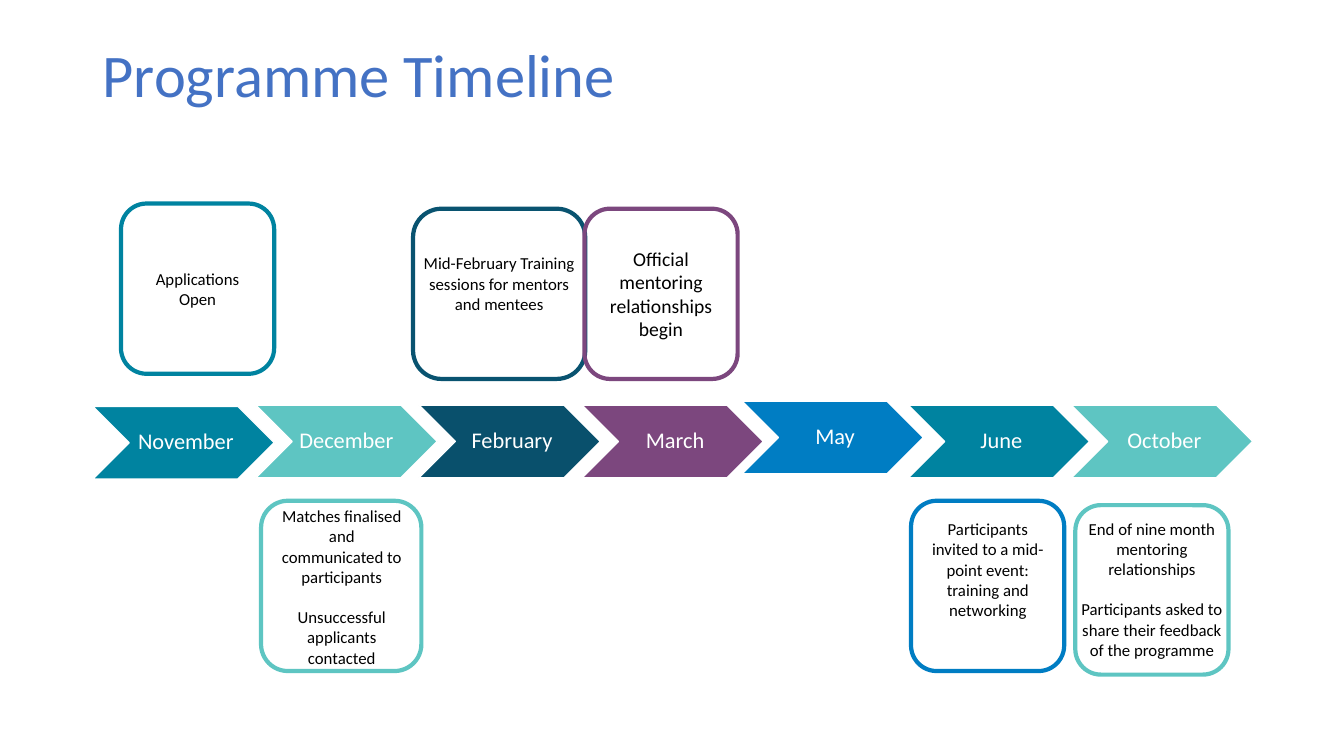
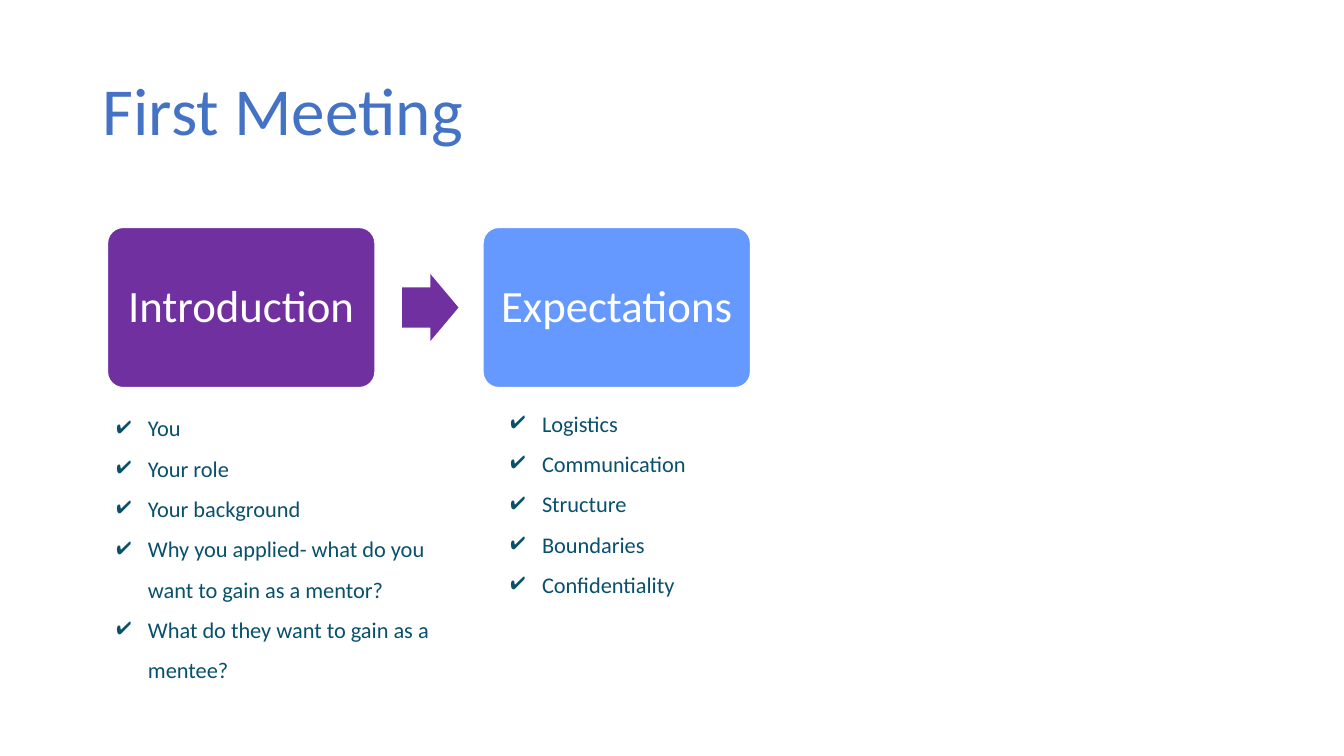
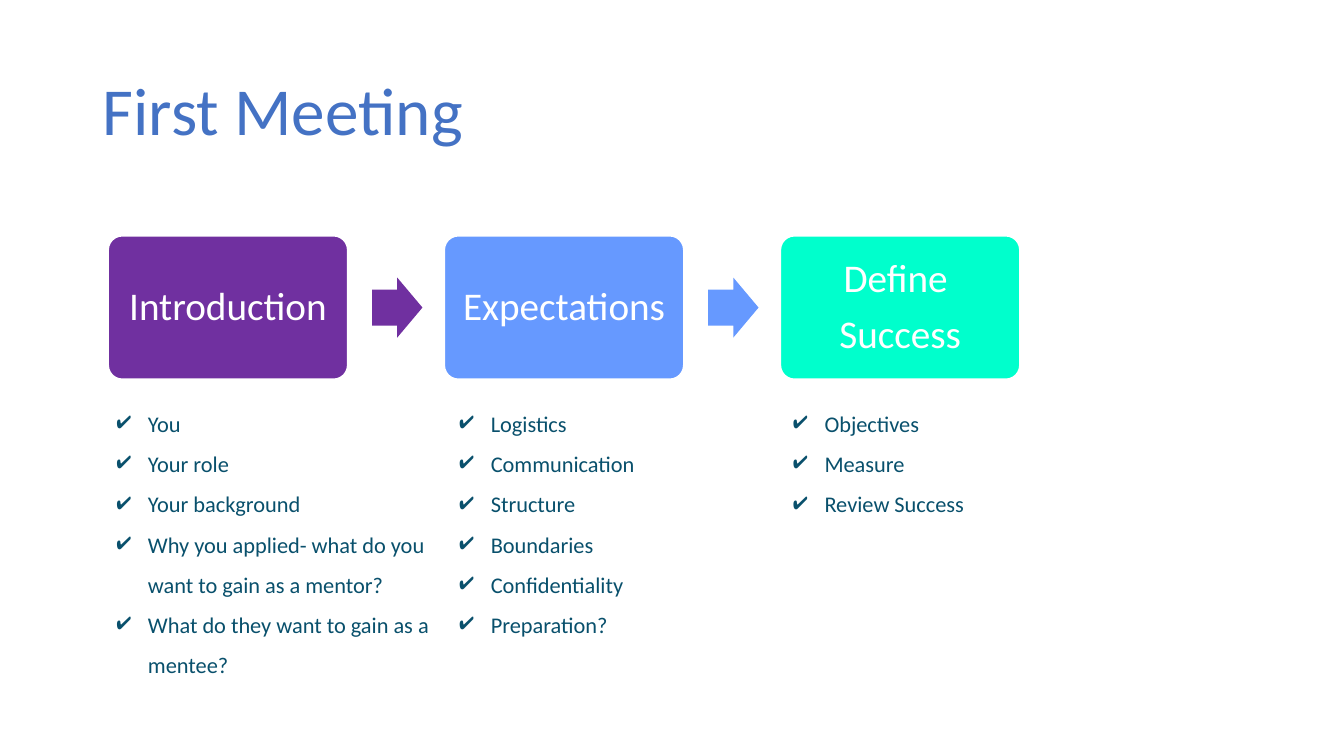
from lxml import etree
from pptx import Presentation
from pptx.dml.color import RGBColor
from pptx.enum.shapes import MSO_SHAPE
from pptx.enum.text import MSO_ANCHOR, PP_ALIGN
from pptx.oxml.ns import qn
from pptx.util import Cm, Pt

CHEVRON = MSO_SHAPE.CHEVRON
ROUNDED = MSO_SHAPE.ROUNDED_RECTANGLE
ARROW = MSO_SHAPE.RIGHT_ARROW
TOP, MIDDLE = MSO_ANCHOR.TOP, MSO_ANCHOR.MIDDLE
LEFT, CENTER = PP_ALIGN.LEFT, PP_ALIGN.CENTER

# Shared colours and font
WHITE = RGBColor(0xFF, 0xFF, 0xFF)
BLACK = RGBColor(0x00, 0x00, 0x00)
TITLE_BLUE = RGBColor(0x44, 0x72, 0xC4)
TEAL = RGBColor(0x00, 0x83, 0xA0)
AQUA = RGBColor(0x5E, 0xC5, 0xC2)
NAVY = RGBColor(0x09, 0x50, 0x6C)
NAVY_EDGE = RGBColor(0x09, 0x53, 0x70)
PLUM = RGBColor(0x7C, 0x47, 0x7E)
BLUE = RGBColor(0x00, 0x7D, 0xC3)
PURPLE = RGBColor(0x70, 0x30, 0xA0)
PERIWINKLE = RGBColor(0x66, 0x99, 0xFF)
MINT = RGBColor(0x00, 0xFF, 0xCC)
FONT = "Calibri"

# Timeline: month, colour, shift from the regular grid (cm)
MONTHS = [
    ("November", TEAL, 0, 0.03),
    ("December ", AQUA, 0, 0),
    ("February", NAVY, 0, 0),
    ("March", PLUM, 0, 0),
    ("May", BLUE, -0.08, -0.1),
    ("June", TEAL, 0, 0),
    ("October", AQUA, 0, 0),
]
# Cards: box (cm), outline, text inside, text size
CARDS = [
    ((3.05, 5.13, 3.86, 4.29), TEAL, ["Applications Open"], 12),
    ((6.58, 12.62, 4.04, 4.29), AQUA, [], 12),
    ((10.41, 5.26, 4.34, 4.29), NAVY_EDGE, [], 12),
    ((14.73, 5.26, 3.86, 4.29), PLUM,
     ["Official mentoring relationships begin"], 14),
    ((22.96, 12.62, 3.86, 4.29), BLUE, [], 12),
    ((27.1, 12.73, 3.86, 4.27), AQUA, [], 12),
]
# Captions laid over cards: box (cm), paragraphs
CAPTIONS = [
    ((6.81, 12.62, 3.61, 5.31),
     ["Matches finalised and communicated to participants",
      "Unsuccessful applicants contacted"]),
    ((23.09, 12.95, 3.61, 2.82),
     ["Participants invited to a mid-point event: training and networking"]),
    ((26.87, 12.93, 4.32, 3.86),
     ["End of nine month mentoring relationships",
      "Participants asked to share their feedback of the programme"]),
    ((10.41, 6.25, 4.34, 2.31),
     ["Mid-February Training sessions for mentors and mentees"]),
]

# First meeting content
INTRODUCTION = ["You", "Your role", "Your background",
                "Why you applied- what do you want to gain as a mentor?",
                "What do they want to gain as a mentee?"]
EXPECTATIONS = ["Logistics", "Communication", "Structure", "Boundaries",
                "Confidentiality"]
SUCCESS = ["Objectives", "Measure", "Review Success"]
STEPS = [(["Introduction"], PURPLE), (["Expectations "], PERIWINKLE),
         (["Define ", "Success"], MINT)]


def write(tf, lines, size, color, align=CENTER, spacing=1.0, gap=0,
          anchor=TOP, margins=(0.25, 0.13, 0.25, 0.13)):
    """Fill a text frame; gap is the space before each later paragraph."""
    left, top, right, bottom = map(Cm, margins)
    frame = {"word_wrap": True, "vertical_anchor": anchor,
             "margin_left": left, "margin_top": top,
             "margin_right": right, "margin_bottom": bottom}
    for name, value in frame.items():
        setattr(tf, name, value)
    for i, line in enumerate(lines):
        p = tf.paragraphs[0] if i == 0 else tf.add_paragraph()
        p.alignment, p.line_spacing = align, spacing
        p.space_before = Pt(gap if i else 0)
        r = p.add_run()
        r.text = line
        for name, value in {"name": FONT, "size": Pt(size)}.items():
            setattr(r.font, name, value)
        r.font.color.rgb = color


def add_titled_slide(prs, title, size=48, anchor=MIDDLE):
    slide = prs.slides.add_slide(prs.slide_layouts[5])
    sp = slide.shapes.title
    sp.left, sp.top, sp.width, sp.height = map(Cm, (2.34, 1.02, 29.21, 3.68))
    write(sp.text_frame, [title], size, TITLE_BLUE, LEFT, 0.9, anchor=anchor)
    return slide


def add_figure(slide, kind, box, adjustments, fill=None, line=None, weight=1):
    sp = slide.shapes.add_shape(kind, *map(Cm, box))
    sp.shadow.inherit = False
    for i, value in enumerate(adjustments):
        sp.adjustments[i] = value
    if fill is None:
        sp.fill.background()
    else:
        sp.fill.solid()
        sp.fill.fore_color.rgb = fill
    if line is None:
        sp.line.fill.background()
    else:
        sp.line.color.rgb = line
        sp.line.width = Pt(weight)
    return sp


def add_text(slide, box, lines, size, color, **style):
    sp = slide.shapes.add_textbox(*map(Cm, box))
    write(sp.text_frame, lines, size, color, **style)
    return sp


def add_checklist(slide, box, items):
    sp = add_text(slide, box, items, 16, NAVY, align=LEFT, spacing=1.5)
    for p in sp.text_frame.paragraphs:
        pPr = p._p.get_or_add_pPr()
        pPr.set("marL", str(Cm(0.79)))
        pPr.set("indent", str(-Cm(0.79)))
        color = etree.SubElement(pPr, qn("a:buClr"))
        etree.SubElement(color, qn("a:srgbClr")).set("val", str(NAVY))
        etree.SubElement(pPr, qn("a:buChar")).set("char", "✔")


def add_steps(slide, steps, left, width, size):
    """Row of boxes with arrows between; every measure follows the width."""
    middle, height = 7.75, 0.6 * width
    arrow_w, arrow_h = 0.21 * width, 0.25 * width
    inset = 0.05 * width
    for i, (lines, color) in enumerate(steps):
        x = left + i * 1.4 * width
        sp = add_figure(slide, ROUNDED,
                        (x, middle - height / 2, width, height), [0.1],
                        color, WHITE, 1.5)
        write(sp.text_frame, lines, size, WHITE, spacing=0.9, gap=9.8,
              anchor=MIDDLE, margins=[inset] * 4)
        if i < len(steps) - 1:
            add_figure(slide, ARROW,
                       (x + 1.1 * width, middle - arrow_h / 2,
                        arrow_w, arrow_h), [0.6, 0.5], color)


def build_timeline(prs):
    slide = add_titled_slide(prs, "Programme Timeline", 43.2, TOP)
    for i, (month, color, dx, dy) in enumerate(MONTHS):
        box = (2.34 + i * 4.11 + dx, 10.21 + dy, 4.57, 1.83)
        sp = add_figure(slide, CHEVRON, box, [0.5], color, WHITE)
        write(sp.text_frame, [month], 16, WHITE, spacing=0.9, anchor=MIDDLE,
              margins=(0.17, 0.05, 0.05, 0.05))
    for box, color, lines, size in CARDS:
        sp = add_figure(slide, ROUNDED, box, [0.167], line=color, weight=3)
        write(sp.text_frame, lines, size, BLACK, anchor=MIDDLE)
    for box, lines in CAPTIONS:
        add_text(slide, box, lines, 12, BLACK, gap=14.6)


def build_meeting(prs, steps, left, width, size, checklists):
    slide = add_titled_slide(prs, "First Meeting")
    add_steps(slide, steps, left, width, size)
    for box, items in checklists:
        add_checklist(slide, box, items)


def main():
    prs = Presentation()
    prs.slide_width, prs.slide_height = Cm(33.87), Cm(19.05)
    build_timeline(prs)
    build_meeting(prs, STEPS[:2], 2.7, 6.76, 32, [
        ((2.69, 9.98, 8.71, 8.5), INTRODUCTION),
        ((12.62, 9.86, 5.72, 7.44), EXPECTATIONS),
    ])
    build_meeting(prs, STEPS, 2.72, 6.05, 28, [
        ((2.69, 9.86, 8.53, 8.5), INTRODUCTION),
        ((11.33, 9.86, 5.72, 8.5), EXPECTATIONS + ["Preparation?"]),
        ((19.74, 9.86, 5.72, 5.38), SUCCESS),
    ])
    prs.save("out.pptx")


if __name__ == "__main__":
    main()
